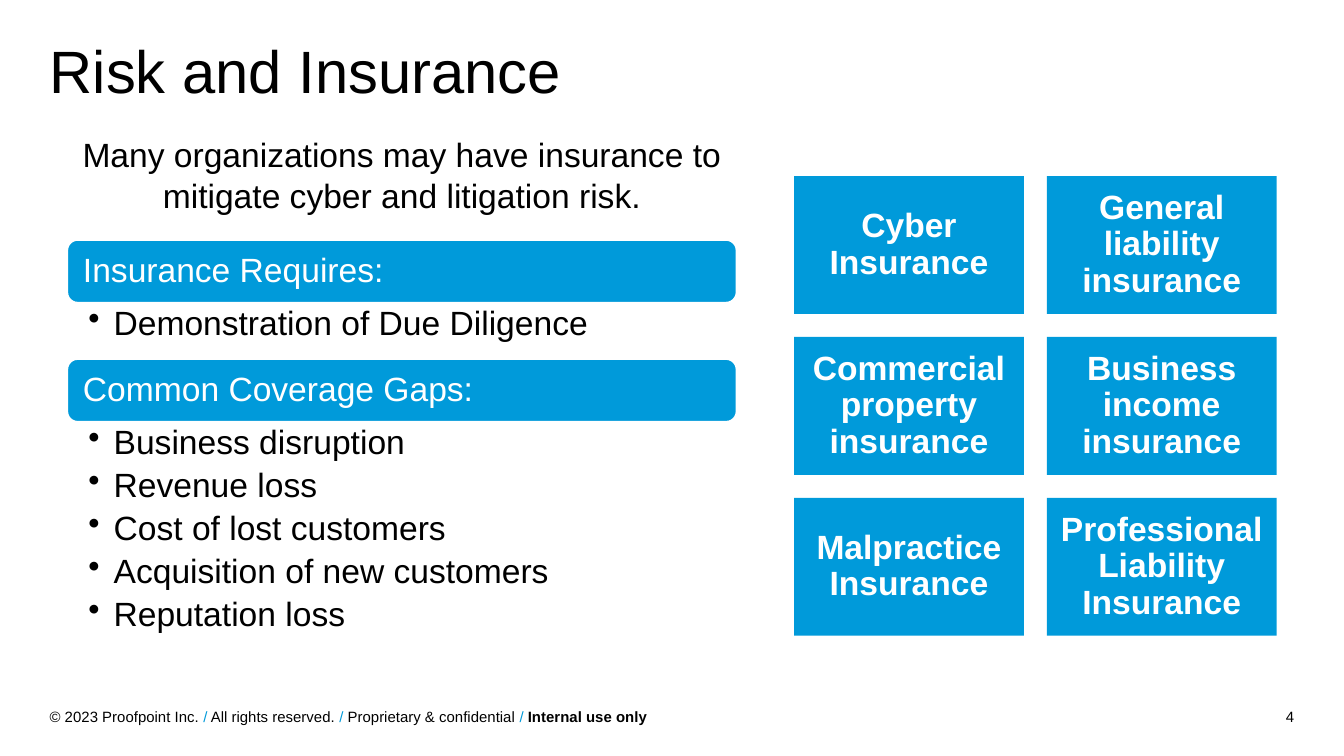
from dataclasses import dataclass

from lxml import etree
from pptx import Presentation
from pptx import util as u
from pptx.dml.color import RGBColor
from pptx.enum import shapes, text
from pptx.oxml import ns


@dataclass(frozen=True)
class Theme:
    font: str = "Arial"
    accent: RGBColor = RGBColor(0x00, 0x9A, 0xDA)
    ink: RGBColor = RGBColor(0, 0, 0)
    paper: RGBColor = RGBColor(255, 255, 255)
    title: float = 32
    body: float = 18
    footer: float = 8


class Deck:
    """Draws styled elements on the current slide, measured in points."""

    def __init__(self, theme, width, height):
        self.theme = theme
        self.file = Presentation()
        self.file.slide_width, self.file.slide_height = u.Pt(width), u.Pt(height)
        self.slide = None

    def add_slide(self):
        self.slide = self.file.slides.add_slide(self.file.slide_layouts[5])

    def style(self, font, size, color, bold=False):
        font.name, font.size, font.bold = self.theme.font, u.Pt(size), bold
        font.color.rgb = color

    def frame(self, shape, anchor, insets=(0, 0, 0, 0)):
        frame = shape.text_frame
        frame.word_wrap = True
        frame.auto_size = text.MSO_AUTO_SIZE.NONE
        frame.vertical_anchor = anchor
        (frame.margin_left, frame.margin_top,
         frame.margin_right, frame.margin_bottom) = map(u.Pt, insets)
        return frame

    def fill_text(self, frame, content, size, color, align=text.PP_ALIGN.LEFT,
                  bold=False, spacing=None):
        frame.text = content
        for paragraph in frame.paragraphs:
            paragraph.alignment = align
            paragraph.line_spacing = spacing
            for run in paragraph.runs:
                self.style(run.font, size, color, bold)

    def title(self, content, box):
        heading = self.slide.shapes.title
        heading.left, heading.top, heading.width, heading.height = map(u.Pt, box)
        frame = self.frame(heading, text.MSO_ANCHOR.TOP)
        self.fill_text(frame, content, self.theme.title, self.theme.ink, spacing=0.9)

    def textbox(self, box, anchor, insets=(0, 0, 0, 0)):
        return self.frame(self.slide.shapes.add_textbox(*map(u.Pt, box)), anchor, insets)

    def label(self, content, box, size, align, anchor):
        self.fill_text(self.textbox(box, anchor), content, size, self.theme.ink, align)

    def footer(self, parts, box):
        line = self.textbox(box, text.MSO_ANCHOR.MIDDLE).paragraphs[0]
        for content, color, bold in parts:
            run = line.add_run()
            run.text = content
            self.style(run.font, self.theme.footer, color, bold)

    def panel(self, kind, content, box, insets, align, bold=False, outline=False):
        panel = self.slide.shapes.add_shape(kind, *map(u.Pt, box))
        panel.shadow.inherit = False
        panel.fill.solid()
        panel.fill.fore_color.rgb = self.theme.accent
        if outline:
            panel.line.color.rgb = self.theme.paper
            panel.line.width = u.Pt(1)
        else:
            panel.line.fill.background()
        frame = self.frame(panel, text.MSO_ANCHOR.MIDDLE, insets)
        self.fill_text(frame, content, self.theme.body, self.theme.paper, align, bold, 0.9)

    def bullets(self, items, box):
        frame = self.textbox(box, text.MSO_ANCHOR.TOP, (11.4, 2, 13, 2))
        self.fill_text(frame, "\n".join(items), self.theme.body, self.theme.ink, spacing=0.9)
        for paragraph in frame.paragraphs:
            paragraph.space_after = u.Pt(3.6)
            properties = paragraph._p.get_or_add_pPr()
            properties.set("marL", str(u.Pt(13.5)))
            properties.set("indent", str(-u.Pt(13.5)))
            etree.SubElement(properties, ns.qn("a:buChar")).set("char", "•")


def main():
    theme = Theme()
    deck = Deck(theme, 720, 405)
    deck.add_slide()
    left, center, right = text.PP_ALIGN.LEFT, text.PP_ALIGN.CENTER, text.PP_ALIGN.RIGHT
    top, middle = text.MSO_ANCHOR.TOP, text.MSO_ANCHOR.MIDDLE

    deck.title("Risk and Insurance", (26.6, 22.3, 667.4, 63.4))
    deck.label("Many organizations may have insurance to mitigate cyber and litigation risk.",
               (36, 72, 358.6, 69), theme.body, center, top)

    sections = {
        "Insurance Requires:": ["Demonstration of Due Diligence"],
        "Common Coverage Gaps:": ["Business disruption", "Revenue loss",
                                  "Cost of lost customers",
                                  "Acquisition of new customers", "Reputation loss"],
    }
    header_height, item_height, list_padding = 33.7, 21.2, 8.9
    y = 128.5
    for header, items in sections.items():
        deck.panel(shapes.MSO_SHAPE.ROUNDED_RECTANGLE, header,
                   (36, y, 358.6, header_height), (6.8, 5, 6.8, 5), left, outline=True)
        y += header_height
        list_height = item_height * len(items) + list_padding
        deck.bullets(items, (36, y, 358.6, list_height))
        y += list_height

    policies = ["Cyber Insurance", "General liability insurance",
                "Commercial property insurance", "Business income insurance",
                "Malpractice Insurance", "Professional Liability Insurance"]
    tile_width, tile_height, gap = 123.1, 73.9, 12.3
    for index, policy in enumerate(policies):
        row, column = divmod(index, 2)
        box = (425.4 + column * (tile_width + gap), 94.3 + row * (tile_height + gap),
               tile_width, tile_height)
        deck.panel(shapes.MSO_SHAPE.RECTANGLE, policy, box, (5, 5, 5, 5), center, bold=True)

    deck.footer([("© 2023 Proofpoint Inc. ", theme.ink, False),
                 ("/", theme.accent, False),
                 (" All rights reserved. ", theme.ink, False),
                 ("/ ", theme.accent, False),
                 ("Proprietary & confidential ", theme.ink, False),
                 ("/ ", theme.accent, False),
                 ("Internal use only", theme.ink, True)], (26.6, 377.3, 333.4, 13))
    deck.label("4", (549.4, 377.3, 144, 13), theme.footer, right, middle)

    deck.file.save("out.pptx")


if __name__ == "__main__":
    main()
